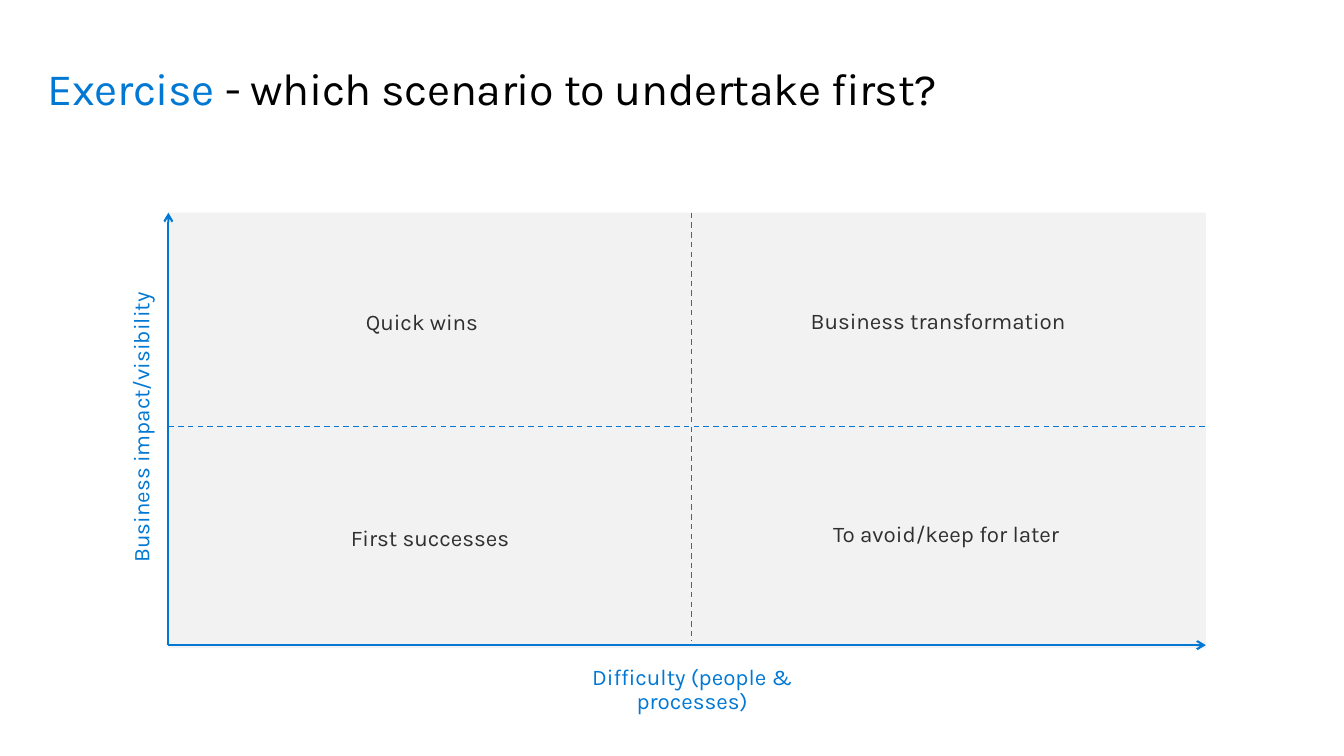
from lxml import etree
from pptx import Presentation
from pptx import util as u
from pptx.dml.color import RGBColor
from pptx.enum import dml, shapes, text
from pptx.oxml import ns

COLOURS = {"blue": "0078D4", "black": "000000", "dark": "2F2F2F", "panel": "F2F2F2"}
PX = 9144  # EMU: 100 px to the inch


def px(*lengths):
    return [u.Emu(length * PX) for length in lengths]


def colour(name):
    return RGBColor.from_string(COLOURS[name])


def add_run(paragraph, words, color="dark", size=16, font="Karla", spacing=0):
    """Append a formatted run; spacing is in hundredths of a point."""
    run = paragraph.add_run()
    run.text = words
    run.font.name = font
    run.font.size = u.Pt(size)
    run.font.color.rgb = colour(color)
    if spacing:
        run._r.get_or_add_rPr().set("spc", str(spacing))


class MatrixSlide:
    def __init__(self, presentation):
        self.slide = presentation.slides.add_slide(presentation.slide_layouts[6])

    def text_box(self, left, top, width, height, insets):
        box = self.slide.shapes.add_textbox(*px(left, top, width, height))
        frame = box.text_frame
        frame.word_wrap = True
        frame.vertical_anchor = text.MSO_ANCHOR.TOP
        (frame.margin_left, frame.margin_top,
         frame.margin_right, frame.margin_bottom) = px(*insets)
        paragraph = frame.paragraphs[0]
        paragraph.line_spacing = 0.9
        return box, paragraph

    def title(self, lead, rest):
        _, paragraph = self.text_box(47, 48, 1240, 83, (0, 18, 0, 0))
        add_run(paragraph, lead, color="blue", size=32, spacing=-30)
        add_run(paragraph, rest, color="black", size=32, spacing=-30)

    def label(self, words, left, top, width=327, color="dark", rotation=0):
        box, paragraph = self.text_box(left, top, width, 44, (10, 10, 10, 10))
        box.rotation = rotation
        paragraph.alignment = text.PP_ALIGN.CENTER
        paragraph.space_after = u.Pt(5.9)
        add_run(paragraph, words, color=color)

    def panel(self, left, top, width, height):
        shape = self.slide.shapes.add_shape(
            shapes.MSO_SHAPE.RECTANGLE, *px(left, top, width, height))
        shape.shadow.inherit = False
        shape.fill.solid()
        shape.fill.fore_color.rgb = colour("panel")
        shape.line.fill.background()

    def line(self, start, end, width=1.0, dashed=False, arrow=False):
        connector = self.slide.shapes.add_connector(
            shapes.MSO_CONNECTOR.STRAIGHT, *px(*start, *end))
        connector.line.color.rgb = colour("blue")
        connector.line.width = u.Pt(width)
        if dashed:
            connector.line.dash_style = dml.MSO_LINE.DASH
        if arrow:
            etree.SubElement(connector.line._get_or_add_ln(),
                             ns.qn("a:tailEnd"), type="arrow")
        etree.SubElement(connector._element.spPr, ns.qn("a:effectLst"))


def main():
    presentation = Presentation()
    presentation.slide_width, presentation.slide_height = px(1333, 750)
    matrix = MatrixSlide(presentation)
    left, top, right, base = 167, 211, 1196, 640

    matrix.title("Exercise", " - which scenario to undertake first?")
    matrix.label("Business impact/visibility", -12, 402, width=306,
                 color="blue", rotation=270)
    matrix.panel(left, top, right - left, 432)
    matrix.line((686, top), (686, 636), dashed=True)
    matrix.line((left, 423), (right, 423), dashed=True)

    for words, label_left, label_top in (
        ("Quick wins", 255, 299),
        ("Business transformation", 767, 298),
        ("First successes", 263, 513),
        ("To avoid/keep for later", 775, 509),
    ):
        matrix.label(words, label_left, label_top)
    matrix.label("Difficulty (people & processes)", 523, 651, color="blue")

    for tip in ((left, top), (right, base)):
        matrix.line((left, base), tip, width=1.5, arrow=True)

    presentation.save("out.pptx")


if __name__ == "__main__":
    main()
